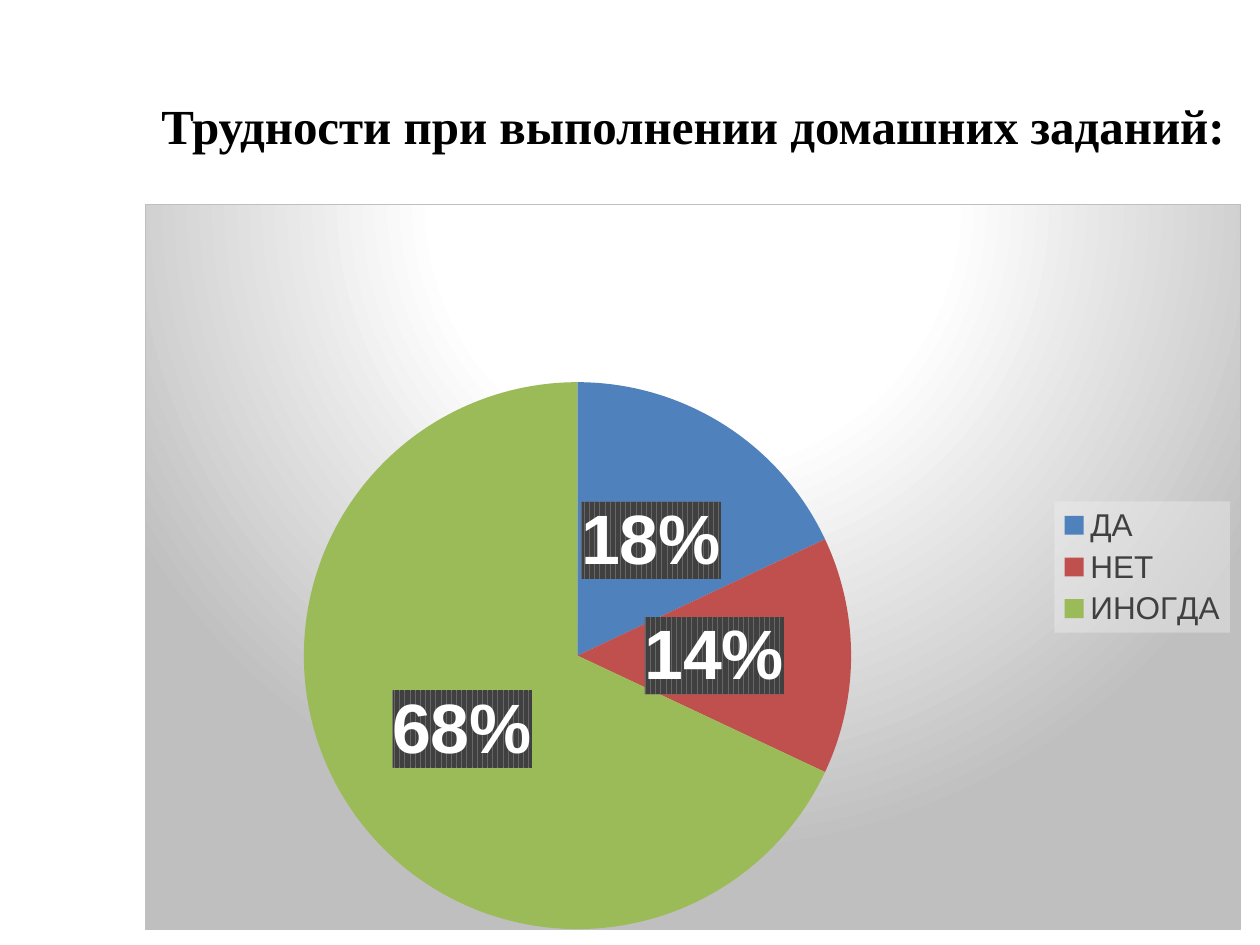
from pptx import Presentation
from pptx.chart.data import CategoryChartData
from pptx.dml.color import RGBColor
from pptx.enum.chart import XL_CHART_TYPE, XL_LABEL_POSITION, XL_LEGEND_POSITION
from pptx.enum.text import MSO_ANCHOR, PP_ALIGN
from pptx.oxml import parse_xml
from pptx.oxml.ns import nsdecls
from pptx.util import Inches, Pt

PIE = XL_CHART_TYPE.PIE
LABEL_CENTER = XL_LABEL_POSITION.CENTER
LEGEND_RIGHT = XL_LEGEND_POSITION.RIGHT
MIDDLE = MSO_ANCHOR.MIDDLE
CENTER = PP_ALIGN.CENTER

SLICES = [("ДА", 18, "4F81BD"), ("НЕТ", 14, "C0504D"), ("ИНОГДА", 68, "9BBB59")]

CHART_FILL = """<a:gradFill><a:gsLst>
<a:gs pos="0"><a:srgbClr val="FFFFFF"/></a:gs>
<a:gs pos="39000"><a:srgbClr val="FFFFFF"/></a:gs>
<a:gs pos="100000"><a:srgbClr val="BFBFBF"/></a:gs></a:gsLst>
<a:path path="circle"><a:fillToRect l="50000" t="-80000" r="50000" b="180000"/></a:path>
</a:gradFill><a:ln w="9525"><a:solidFill><a:srgbClr val="BFBFBF"/></a:solidFill></a:ln>"""
LABEL_FILL = """<a:pattFill prst="dkVert"><a:fgClr><a:srgbClr val="404040"/></a:fgClr>
<a:bgClr><a:srgbClr val="666666"/></a:bgClr></a:pattFill><a:ln><a:noFill/></a:ln>"""
LEGEND_FILL = """<a:solidFill><a:srgbClr val="F2F2F2"><a:alpha val="39000"/></a:srgbClr>
</a:solidFill><a:ln><a:noFill/></a:ln>"""


def rgb(color):
    return RGBColor.from_string(color)


def format_text(target, text=None, size=10, color="000000", font="Arial", bold=False):
    """Format the font of a paragraph or chart part, after writing its text if given."""
    if text is not None:
        target = target.add_run()
        target.text = text
    f = target.font
    f.name, f.size, f.bold = font, Pt(size), bold
    f.color.rgb = rgb(color)


prs = Presentation()
prs.slide_width, prs.slide_height = Inches(10), Inches(7.5)
s = prs.slides.add_slide(prs.slide_layouts[5])

# Title
title = s.shapes.title
title.left, title.top = Inches(1), Inches(0.37)
title.width, title.height = Inches(9), Inches(1.25)
tf = title.text_frame
tf.vertical_anchor = MIDDLE
p = tf.paragraphs[0]
p.alignment = CENTER
format_text(p, "Трудности при выполнении домашних заданий:",
            size=28, font="Times New Roman", bold=True)

# Pie chart
data = CategoryChartData()
data.categories = [name for name, _, _ in SLICES]
data.add_series("Series 1", [value for _, value, _ in SLICES])
chart = s.shapes.add_chart(PIE, Inches(1.15), Inches(1.62),
                           Inches(8.7), Inches(5.76), data).chart
format_text(chart)
chart.has_title = False
chart.plots[0].vary_by_categories = True

series = chart.plots[0].series[0]
for i, (_, _, color) in enumerate(SLICES):
    fill = series.points[i].format.fill
    fill.solid()
    fill.fore_color.rgb = rgb(color)

labels = series.data_labels
labels.show_percentage = True
labels.show_value = False
labels.number_format = "0%"
labels.number_format_is_linked = False
labels.position = LABEL_CENTER
format_text(labels, size=40, color="FFFFFF", bold=True)

chart.has_legend = True
legend = chart.legend
legend.position = LEGEND_RIGHT
legend.include_in_layout = False
format_text(legend, size=18, color="404040")

# Backgrounds of the chart, its labels and its legend
space = chart.element
for before, fill_xml in (("c:chart", CHART_FILL),
                         (".//c:ser/c:dLbls/c:numFmt", LABEL_FILL),
                         (".//c:legend/c:overlay", LEGEND_FILL)):
    space.xpath(before)[0].addnext(
        parse_xml(f'<c:spPr {nsdecls("c", "a")}>{fill_xml}</c:spPr>'))

# Plot area position, as fractions of the chart
plot_area = space.xpath(".//c:plotArea")[0]
for old in plot_area.xpath("c:layout"):
    plot_area.remove(old)
plot_area.insert(0, parse_xml(
    f'<c:layout {nsdecls("c")}><c:manualLayout><c:layoutTarget val="inner"/>'
    '<c:xMode val="edge"/><c:yMode val="edge"/><c:x val="0"/><c:y val="0.245"/>'
    '<c:w val="0.789"/><c:h val="0.755"/></c:manualLayout></c:layout>'))

prs.save("out.pptx")
